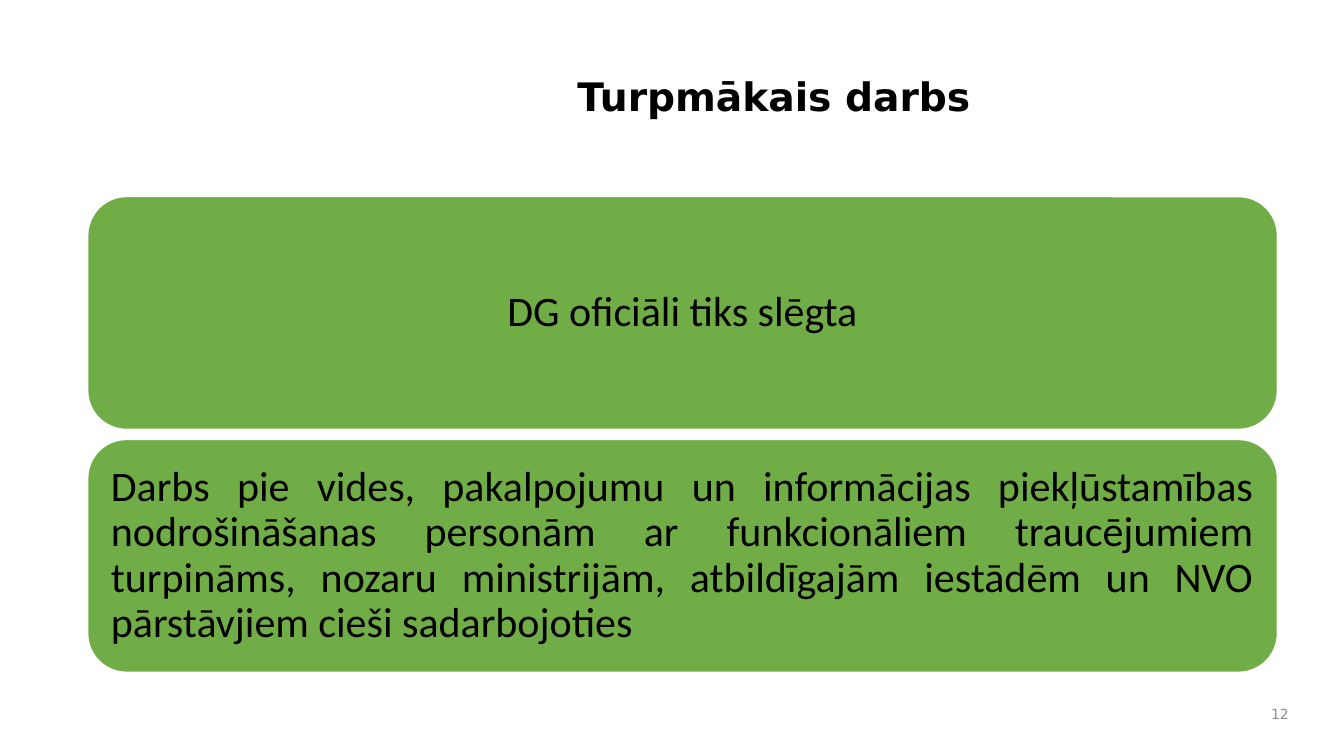
from pptx import Presentation
from pptx.dml.color import RGBColor
from pptx.enum import shapes, text
from pptx.util import Inches, Pt


def color(value):
    return RGBColor.from_string(value)


class SlideBuilder:
    heading_font = "DejaVu Sans"
    body_font = "Calibri"
    black = "000000"
    white = "FFFFFF"
    gray = "8C8C8C"
    green = "70AD47"

    def __init__(self, presentation):
        self.slide = presentation.slides.add_slide(presentation.slide_layouts[6])
        self.slide.background.fill.solid()
        self.slide.background.fill.fore_color.rgb = color(self.white)

    def label(self, wording, left, top, width, height, size, font, ink,
              align, bold=False, inset=0.1, spacing=1.0):
        shape = self.slide.shapes.add_textbox(
            Inches(left), Inches(top), Inches(width), Inches(height))
        frame = shape.text_frame
        frame.text = wording
        frame.word_wrap = True
        frame.vertical_anchor = text.MSO_ANCHOR.MIDDLE
        frame.margin_left = frame.margin_right = Inches(inset)
        frame.margin_top = frame.margin_bottom = Inches(inset / 2 if inset == 0.1 else inset)
        paragraph = frame.paragraphs[0]
        paragraph.alignment = align
        paragraph.line_spacing = spacing
        run = paragraph.runs[0]
        run.font.name = font
        run.font.size = Pt(size)
        run.font.bold = bold
        run.font.color.rgb = color(ink)

    def card(self, wording, left, top, width, height, align):
        shape = self.slide.shapes.add_shape(
            shapes.MSO_SHAPE.ROUNDED_RECTANGLE,
            Inches(left), Inches(top), Inches(width), Inches(height))
        shape.shadow.inherit = False
        shape.fill.solid()
        shape.fill.fore_color.rgb = color(self.green)
        shape.line.color.rgb = color(self.white)
        shape.line.width = Pt(1)
        pad = 0.11
        self.label(wording, left + pad, top + pad, width - 2 * pad, height - 2 * pad,
                   30, self.body_font, self.black, align, inset=0.12, spacing=0.9)


def main():
    presentation = Presentation()
    presentation.slide_width = Inches(13.33)
    presentation.slide_height = Inches(7.5)
    builder = SlideBuilder(presentation)
    align = text.PP_ALIGN

    builder.label("Turpmākais darbs", 2.68, 0.42, 9.99, 1.13, 28,
                  builder.heading_font, builder.black, align.CENTER,
                  bold=True, spacing=0.9)

    cards = [
        ("DG oficiāli tiks slēgta", align.CENTER),
        ("Darbs pie vides, pakalpojumu un informācijas piekļūstamības "
         "nodrošināšanas personām ar funkcionāliem traucējumiem turpināms, "
         "nozaru ministrijām, atbildīgajām iestādēm un NVO pārstāvjiem "
         "cieši sadarbojoties", align.JUSTIFY),
    ]
    card_height, gap = 2.31, 0.1
    for index, (wording, alignment) in enumerate(cards):
        top = 1.95 + index * (card_height + gap)
        builder.card(wording, 0.87, top, 11.8, card_height, alignment)

    builder.label("12", 12.44, 6.92, 0.44, 0.33, 10,
                  builder.heading_font, builder.gray, align.RIGHT)

    presentation.save("out.pptx")


if __name__ == "__main__":
    main()
